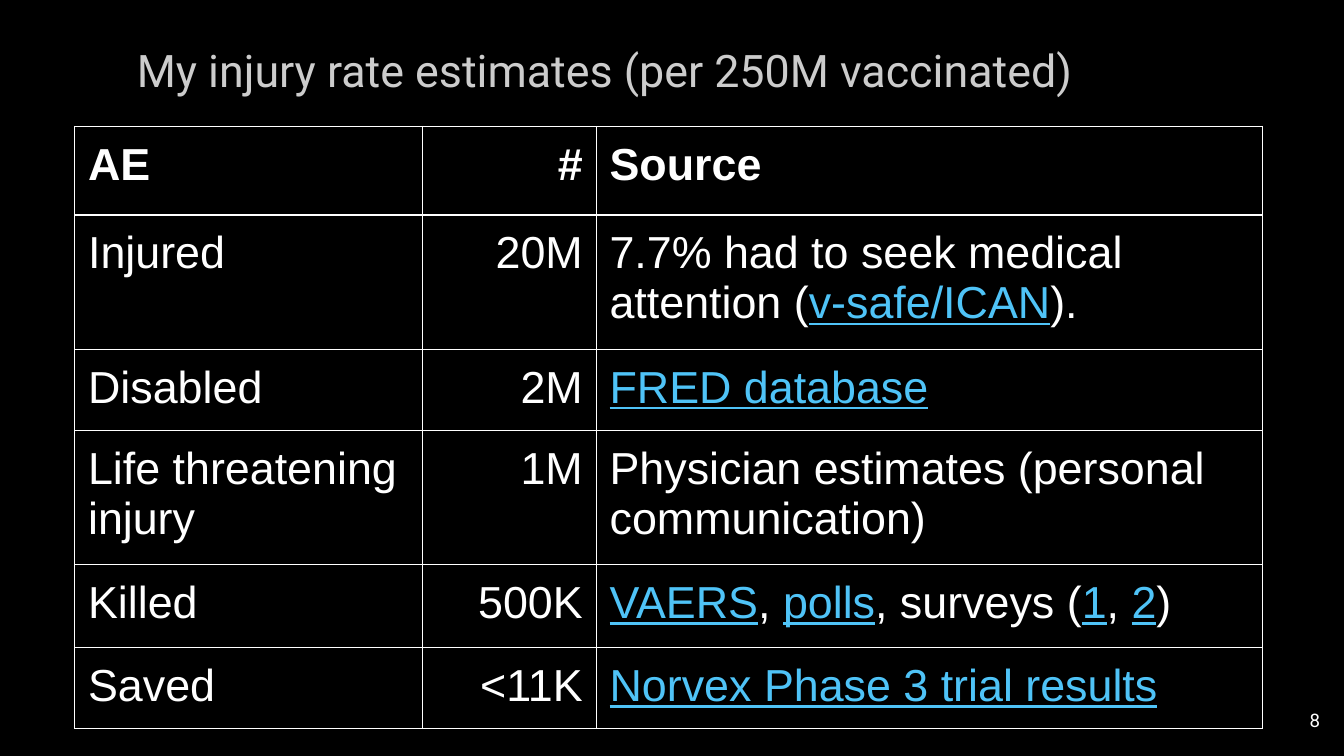
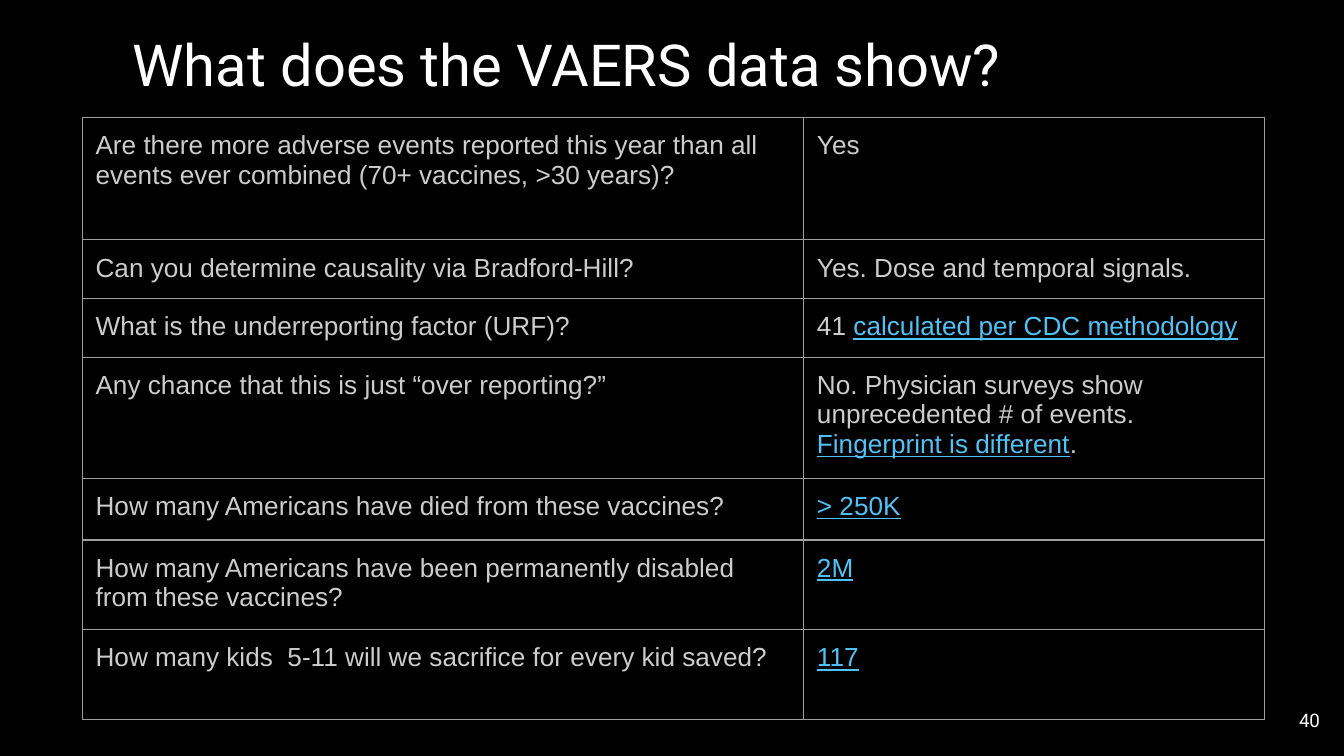
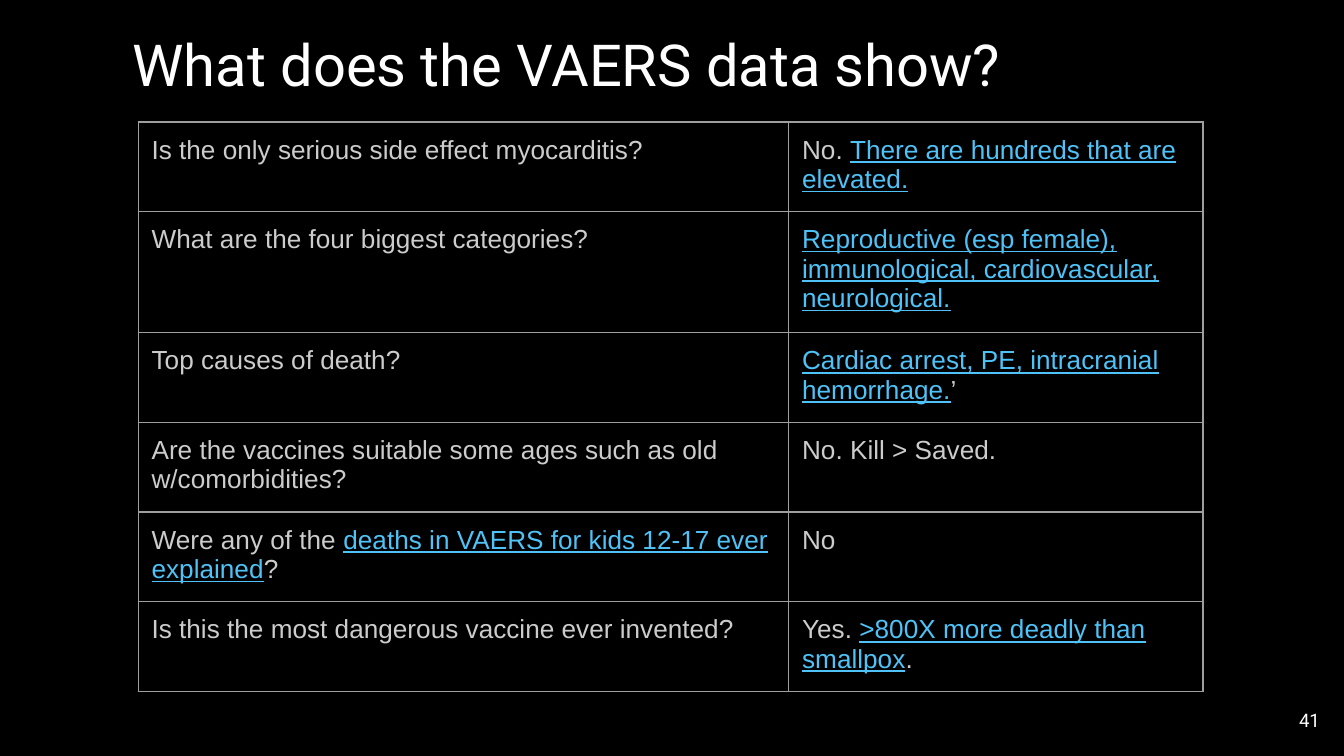
from lxml import etree
from pptx import Presentation
from pptx.dml.color import RGBColor as RGB
from pptx.enum.text import MSO_ANCHOR as Anchor
from pptx.enum.text import MSO_AUTO_SIZE as AutoSize
from pptx.enum.text import PP_ALIGN as Align
from pptx.oxml.ns import qn
from pptx.util import Pt

BLACK = RGB(0x00, 0x00, 0x00)
WHITE = RGB(0xFF, 0xFF, 0xFF)
SILVER = RGB(0xCC, 0xCC, 0xCC)
GREY = RGB(0x9E, 0x9E, 0x9E)
SKY = RGB(0x4F, 0xC3, 0xF7)

LINK_MARK = "|"
INSET = Pt(7.2)
MARGINS = {f"margin_{side}": INSET for side in ("left", "right", "top", "bottom")}
PAGE_NUMBER_BOX = (671, 370, 43.2, 31)
PAGE_NUMBER_FONT = {"name": "Roboto", "size": Pt(10), "color": WHITE}
LINK_FONT = {"color": SKY, "underline": True}

RATE_TITLE = {
    "box": (66.2, 15.8, 539.3, 43.9),
    "font": {"name": "Roboto", "size": Pt(24), "color": SILVER},
}
VAERS_TITLE = {
    "box": (64, 8, 601.2, 95.8),
    "font": {"name": "Roboto", "size": Pt(31), "color": WHITE},
}
RATE_TABLE = {
    "font": {"name": "Arial", "size": Pt(24), "color": WHITE},
    "border": WHITE,
    "alignments": (Align.LEFT, Align.RIGHT, Align.LEFT),
    "header": True,
}
VAERS_TABLE = {
    "font": {"name": "Arial", "size": Pt(14), "color": SILVER},
    "border": GREY,
    "alignments": (Align.LEFT, Align.LEFT),
    "header": False,
}

SLIDES = [
    {
        "title": "My injury rate estimates (per 250M vaccinated)",
        "title_style": RATE_TITLE,
        "number": "8",
        "table_style": RATE_TABLE,
        "corner": (40, 67.7),
        "columns": (186.5, 92.9, 357),
        "heights": (47.5, 47.5, 43.2, 42.5, 44.6, 43.2),
        "rows": [
            ("AE", "#", "Source"),
            ("Injured", "20M", "7.7% had to seek medical attention (|v-safe/ICAN|)."),
            ("Disabled", "2M", "|FRED database|"),
            ("Life threatening injury", "1M", "Physician estimates (personal communication)"),
            ("Killed", "500K", "|VAERS|, |polls|, surveys (|1|, |2|)"),
            ("Saved", "<11K", "|Norvex Phase 3 trial results|"),
        ],
    },
    {
        "title": "What does the VAERS data show?",
        "title_style": VAERS_TITLE,
        "number": "40",
        "table_style": VAERS_TABLE,
        "corner": (44, 63),
        "columns": (386.5, 247),
        "heights": (65.5, 31.5, 31.5, 46, 33, 48, 48),
        "rows": [
            ("Are there more adverse events reported this year than all events ever "
             "combined (70+ vaccines, >30 years)?", "Yes"),
            ("Can you determine causality via Bradford-Hill?", "Yes. Dose and temporal signals."),
            ("What is the underreporting factor (URF)?", "41 |calculated per CDC methodology|"),
            ("Any chance that this is just “over reporting?”",
             "No. Physician surveys show unprecedented # of events. |Fingerprint is different|."),
            ("How many Americans have died from these vaccines?", "|> 250K|"),
            ("How many Americans have been permanently disabled from these vaccines?", "|2M|"),
            ("How many kids  5-11 will we sacrifice for every kid saved?", "|117|"),
        ],
    },
    {
        "title": "What does the VAERS data show?",
        "title_style": VAERS_TITLE,
        "number": "41",
        "table_style": VAERS_TABLE,
        "corner": (74, 65.3),
        "columns": (348.5, 222),
        "heights": (30,) * 6,
        "rows": [
            ("Is the only serious side effect myocarditis?",
             "No. |There are hundreds that are elevated.|"),
            ("What are the four biggest categories?",
             "|Reproductive (esp female), immunological, cardiovascular, neurological.|"),
            ("Top causes of death?", "|Cardiac arrest, PE, intracranial hemorrhage.|’"),
            ("Are the vaccines suitable some ages such as old w/comorbidities?",
             "No. Kill > Saved."),
            ("Were any of the |deaths in VAERS for kids 12-17 ever explained|?", "No"),
            ("Is this the most dangerous vaccine ever invented?",
             "Yes. |>800X more deadly than smallpox|."),
        ],
    },
]


def set_values(target, values):
    for name, value in values.items():
        if name == "color":
            target.color.rgb = value
        else:
            setattr(target, name, value)


def write_text(paragraph, text, font, alignment=Align.LEFT):
    paragraph.alignment = alignment
    for index, part in enumerate(text.split(LINK_MARK)):
        if part:
            run = paragraph.add_run()
            run.text = part
            set_values(run.font, font | LINK_FONT if index % 2 else font)


def add_text(slide, box, text, font, alignment=Align.LEFT, **frame_values):
    frame = slide.shapes.add_textbox(*map(Pt, box)).text_frame
    set_values(frame, MARGINS | {"word_wrap": True} | frame_values)
    write_text(frame.paragraphs[0], text, font, alignment)


def add_borders(cell, color):
    properties = cell._tc.get_or_add_tcPr()
    for edge in ("lnL", "lnR", "lnT", "lnB"):
        line = etree.SubElement(properties, qn(f"a:{edge}"), w=str(Pt(0.75)))
        fill = etree.SubElement(line, qn("a:solidFill"))
        etree.SubElement(fill, qn("a:srgbClr"), val=str(color))


def add_grid(slide, content):
    style, rows = content["table_style"], content["rows"]
    columns, heights = content["columns"], content["heights"]
    box = (*content["corner"], sum(columns), sum(heights))
    table = slide.shapes.add_table(len(rows), len(columns), *map(Pt, box)).table
    set_values(table, {"first_row": False, "horz_banding": False})
    for column, width in zip(table.columns, columns):
        column.width = Pt(width)
    for index, (row, height, texts) in enumerate(zip(table.rows, heights, rows)):
        row.height = Pt(height)
        font = style["font"] | {"bold": style["header"] and index == 0}
        for cell, text, alignment in zip(row.cells, texts, style["alignments"]):
            set_values(cell, MARGINS)
            add_borders(cell, style["border"])
            cell.fill.background()
            write_text(cell.text_frame.paragraphs[0], text, font, alignment)


def add_content_slide(presentation, content):
    slide = presentation.slides.add_slide(presentation.slide_layouts[6])
    slide.background.fill.solid()
    slide.background.fill.fore_color.rgb = BLACK
    title_style = content["title_style"]
    add_text(slide, title_style["box"], content["title"], title_style["font"],
             auto_size=AutoSize.SHAPE_TO_FIT_TEXT)
    add_text(slide, PAGE_NUMBER_BOX, content["number"], PAGE_NUMBER_FONT, Align.RIGHT,
             vertical_anchor=Anchor.MIDDLE)
    add_grid(slide, content)


def main():
    presentation = Presentation()
    set_values(presentation, {"slide_width": Pt(720), "slide_height": Pt(405)})
    for content in SLIDES:
        add_content_slide(presentation, content)
    presentation.save("out.pptx")


if __name__ == "__main__":
    main()
